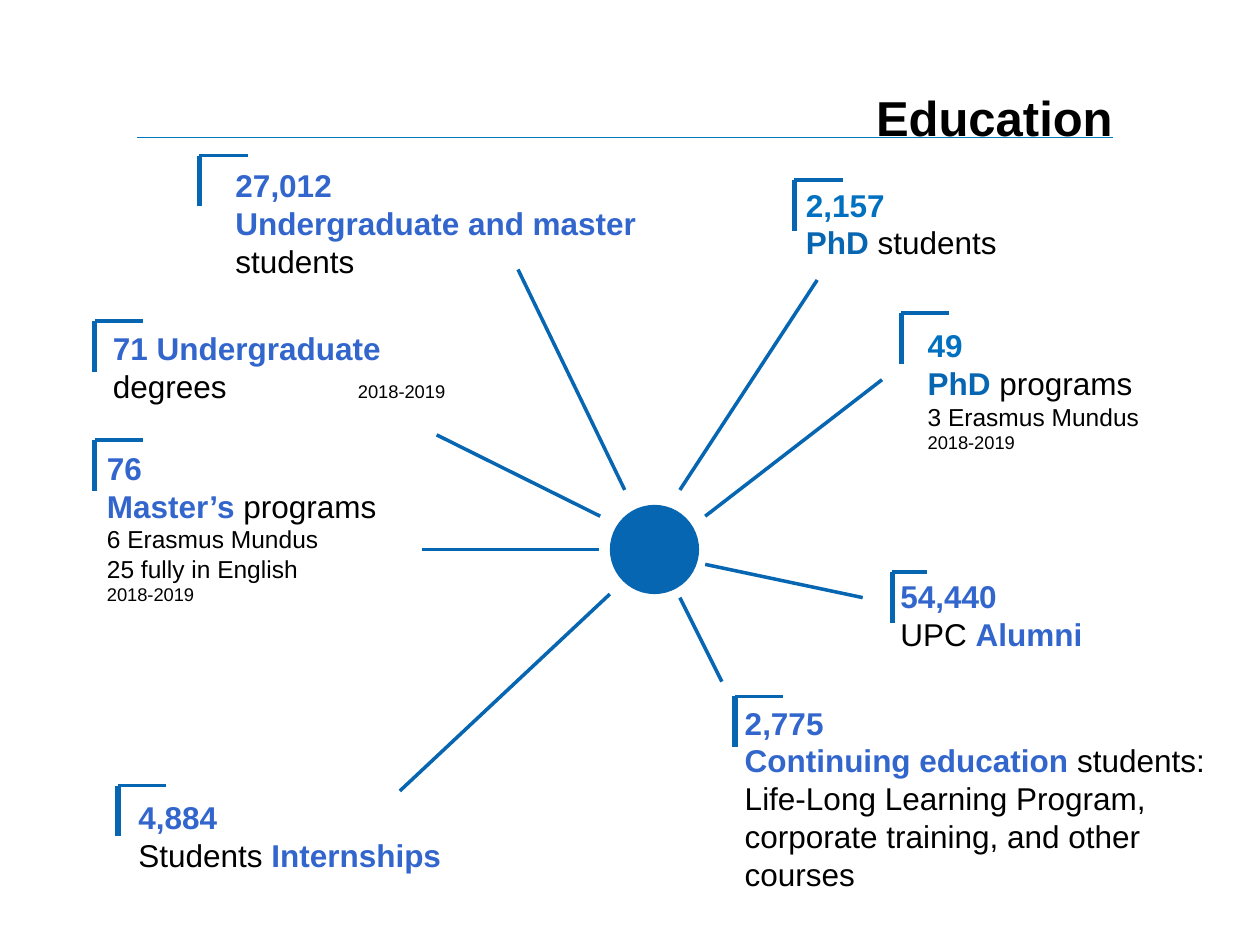
import pptx
import pptx.util
import pptx.dml.color
import pptx.enum.shapes
import pptx.enum.text
import pptx.oxml
import pptx.oxml.ns

Pt = pptx.util.Pt
Kind = pptx.enum.shapes
Align = pptx.enum.text

DEEP = "0766B2"
MID = "3366CC"
SKY = "0070C0"
BLACK = "000000"


def paint(text):
    return pptx.dml.color.RGBColor.from_string(text)


class Page:
    face = "Arial"

    def __init__(self, deck):
        self.slide = deck.slides.add_slide(deck.slide_layouts[5])
        self.shapes = self.slide.shapes

    def style(self, font, size, color, bold):
        font.name = self.face
        font.size = Pt(size)
        font.color.rgb = paint(color)
        font.bold = bold

    def title(self, text, left, top, width, height):
        box = self.shapes.title
        box.left, box.top = Pt(left), Pt(top)
        box.width, box.height = Pt(width), Pt(height)
        frame = box.text_frame
        frame.text = text
        frame.auto_size = Align.MSO_AUTO_SIZE.NONE
        frame.vertical_anchor = Align.MSO_ANCHOR.TOP
        para = frame.paragraphs[0]
        para.alignment = Align.PP_ALIGN.RIGHT
        self.style(para.font, 28, BLACK, True)

    def line(self, x1, y1, x2, y2, width=2, color=DEEP):
        line = self.shapes.add_connector(
            Kind.MSO_CONNECTOR.STRAIGHT, Pt(x1), Pt(y1), Pt(x2), Pt(y2))
        line.line.width = Pt(width)
        line.line.color.rgb = paint(color)
        props = line._element.spPr
        props.append(pptx.oxml.parse_xml(
            "<a:effectLst %s/>" % pptx.oxml.ns.nsdecls("a")))

    def corner(self, x, y, span=27.5):
        self.line(x, y, x + span, y)
        self.line(x, y + 29, x, y, 3)

    def hub(self, left, top, width, height):
        dot = self.shapes.add_shape(
            Kind.MSO_SHAPE.OVAL, Pt(left), Pt(top), Pt(width), Pt(height))
        dot.shadow.inherit = False
        dot.fill.solid()
        dot.fill.fore_color.rgb = paint(DEEP)
        dot.line.fill.background()

    def text(self, left, top, width, height, rows, tab=None):
        box = self.shapes.add_textbox(Pt(left), Pt(top), Pt(width), Pt(height))
        frame = box.text_frame
        frame.word_wrap = True
        for spot, row in enumerate(rows):
            para = frame.paragraphs[0] if spot == 0 else frame.add_paragraph()
            if tab and any("\t" in run[0] for run in row):
                para._p.get_or_add_pPr().append(pptx.oxml.parse_xml(
                    '<a:tabLst %s><a:tab pos="%d" algn="l"/></a:tabLst>'
                    % (pptx.oxml.ns.nsdecls("a"), Pt(tab))))
            looks = {run[1:] for run in row}
            if len(looks) == 1:
                self.style(para.font, *row[0][1:])
            for words, *look in row:
                run = para.add_run()
                run.text = words
                if len(looks) > 1:
                    self.style(run.font, *look)


def key(words, color=MID):
    return words, 18, color, True


def plain(words, size=18):
    return words, size, BLACK, False


YEAR = "2018-2019"

SPOKES = [
    (228.5, 452, 348.5, 339.5), (249.5, 248.5, 343, 295),
    (357, 280, 296, 154), (241, 314, 342.5, 314),
    (412.5, 389.5, 388.5, 341.5), (388.5, 280, 467, 160),
    (403, 295, 504, 217), (403, 322.5, 493, 341.5),
]

CORNERS = [
    (114, 89), (54, 183.5), (54, 251.5), (67.5, 449),
    (454, 103), (515, 179), (420, 398),
]

NOTES = [
    (127.5, 91.5, 261, 73, [
        [key("27,012")],
        [key("Undergraduate and master "), plain("students")]]),
    (54, 253, 215, 119, [
        [key("76")],
        [key("Master’s "), plain("programs")],
        [plain("6 Erasmus Mundus", 14)],
        [plain("25 fully in English", 14)],
        [plain(YEAR, 10.5)]]),
    (72, 452.5, 222, 51, [
        [key("4,884")],
        [plain("Students "), key("Internships")]]),
    (453.5, 102.5, 261, 51, [
        [key("2,157", SKY)],
        [key("PhD", DEEP), plain(" students")]]),
    (523, 183, 190, 124, [
        [key("49", SKY)],
        [key("PhD ", DEEP), plain("programs")],
        [plain("3 Erasmus Mundus", 14)],
        [plain(YEAR, 10.5)]]),
    (507.5, 326, 194, 51, [
        [key("54,440")],
        [plain("UPC "), key("Alumni")]]),
    (418.5, 398.5, 301.5, 117, [
        [key("2,775")],
        [key("Continuing education "),
         plain("students: Life-Long Learning Program, "
               "corporate training, and other courses")]]),
]


def main():
    deck = pptx.Presentation()
    deck.slide_width, deck.slide_height = Pt(720), Pt(540)
    page = Page(deck)
    page.title("Education", 255, 46.5, 388, 36)
    page.line(78.5, 78.5, 636, 78.5, 0.75, "007ABE")
    page.hub(348.5, 288.5, 51, 51)
    for spoke in SPOKES:
        page.line(*spoke)
    for spot in CORNERS:
        page.corner(*spot)
    page.corner(510, 327, 20)
    for note in NOTES:
        page.text(*note)
    page.text(57.5, 184.5, 225, 51, [
        [key("71 Undergraduate")],
        [plain("degrees"), plain("\t" + YEAR, 10.5)]], 140)
    deck.save("out.pptx")


if __name__ == "__main__":
    main()
